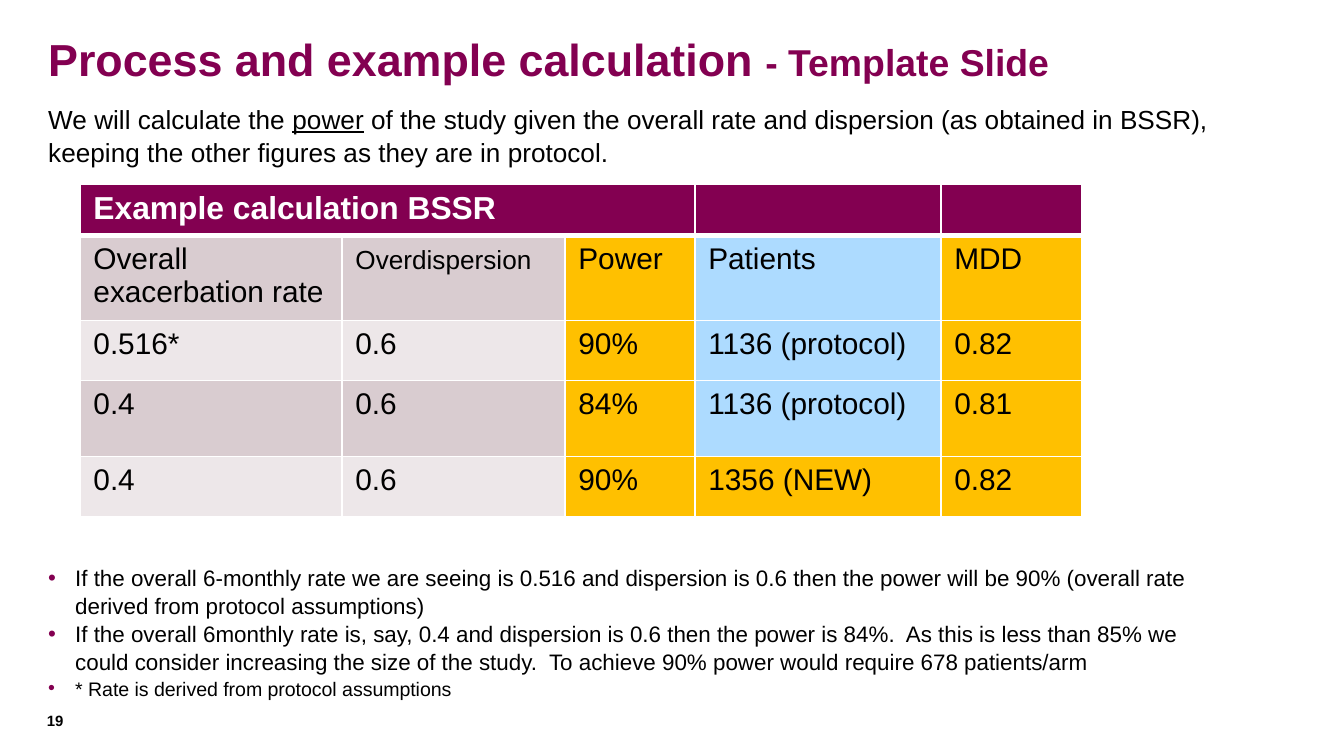
from dataclasses import dataclass

from lxml.etree import SubElement
from pptx import Presentation
from pptx.dml.color import RGBColor as RGB
from pptx.enum.text import MSO_ANCHOR as Anchor
from pptx.oxml.ns import qn
from pptx.util import Pt

SCALE = 914400 / 134.4


def px(n):
    return round(n * SCALE)


@dataclass(frozen=True)
class Theme:
    font: str = "Arial"
    plum: str = "830051"
    black: str = "000000"
    white: str = "FFFFFF"
    band_dark: str = "D9CCD0"
    band_light: str = "EDE7E9"
    gold: str = "FFC000"
    blue: str = "ADDBFF"
    title: float = 24
    subtitle: float = 20
    intro: float = 14
    header: float = 17
    cell: float = 16
    small_cell: float = 14
    bullet: float = 12
    footnote: float = 10.5
    number: float = 8
    spacing: float = 1.05


class Deck:
    def __init__(self, theme):
        self.t = theme
        self.prs = Presentation()
        self.prs.slide_width, self.prs.slide_height = px(1344), px(756)
        self.s = self.prs.slides.add_slide(self.prs.slide_layouts[6])

    def style(self, r, size, color, bold=False, underline=False):
        f = r.font
        f.name, f.size, f.bold = self.t.font, Pt(size), bold
        f.color.rgb = RGB.from_string(color)
        if underline:
            f.underline = True

    def box(self, x, y, w, h, anchor=Anchor.TOP):
        tf = self.s.shapes.add_textbox(px(x), px(y), px(w), px(h)).text_frame
        tf.word_wrap = True
        tf.vertical_anchor = anchor
        return tf

    def title(self, main, suffix, *frame):
        p = self.box(*frame, Anchor.MIDDLE).paragraphs[0]
        for text, size in ((main, self.t.title), (suffix, self.t.subtitle)):
            r = p.add_run()
            r.text = text
            self.style(r, size, self.t.plum, True)

    def intro(self, before, term, after, *frame):
        p = self.box(*frame).paragraphs[0]
        p.line_spacing = self.t.spacing
        for text in (before, term, after):
            r = p.add_run()
            r.text = text
            self.style(r, self.t.intro, self.t.black, underline=text == term)

    def bullets(self, items, *frame):
        tf = self.box(*frame)
        tf.text = "\n".join(text for text, _ in items)
        for p, (_, size) in zip(tf.paragraphs, items):
            p.line_spacing = self.t.spacing
            pPr = p._p.get_or_add_pPr()
            pPr.set("marL", str(px(27)))
            pPr.set("indent", str(-px(27)))
            color = SubElement(pPr, qn("a:buClr"))
            SubElement(color, qn("a:srgbClr"), val=self.t.plum)
            SubElement(pPr, qn("a:buFont"), typeface=self.t.font)
            SubElement(pPr, qn("a:buChar"), char="•")
            self.style(p.runs[0], size, self.t.black)

    def page_number(self, text, *frame):
        tf = self.box(*frame)
        tf.margin_left = tf.margin_top = tf.margin_right = tf.margin_bottom = 0
        tf.text = text
        self.style(tf.paragraphs[0].runs[0], self.t.number, self.t.black, True)

    def borders(self, cell, bottom, top):
        tcPr = cell._tc.get_or_add_tcPr()
        widths = {"a:lnL": 1, "a:lnR": 1, "a:lnT": top, "a:lnB": bottom}
        for tag, width in widths.items():
            ln = SubElement(tcPr, qn(tag), w=str(Pt(width)))
            fill = SubElement(ln, qn("a:solidFill"))
            SubElement(fill, qn("a:srgbClr"), val=self.t.white)

    def cell_fill(self, i, j, text):
        if i == 0:
            return self.t.plum
        if j < 2:
            return self.t.band_dark if i % 2 else self.t.band_light
        return self.t.blue if j == 3 and "NEW" not in text else self.t.gold

    def table(self, rows, x, y, widths, heights):
        frame = self.s.shapes.add_table(len(rows), len(widths), px(x), px(y),
                                        px(sum(widths)), px(sum(heights)))
        table = frame.table
        for col, w in zip(table.columns, widths):
            col.width = px(w)
        for row, h in zip(table.rows, heights):
            row.height = px(h)
        for i, row in enumerate(rows):
            size = self.t.cell if i else self.t.header
            color = self.t.black if i else self.t.white
            for j, text in enumerate(row):
                cell = table.cell(i, j)
                self.borders(cell, 1 if i else 3, 3 if i == 1 else 1)
                cell.fill.solid()
                cell.fill.fore_color.rgb = RGB.from_string(self.cell_fill(i, j, text))
                p = cell.text_frame.paragraphs[0]
                p.text = text
                for r in p.runs:
                    self.style(r, size, color, i == 0)
                p._p.get_or_add_endParaRPr().set("sz", str(size * 100))
        table.cell(0, 0).merge(table.cell(0, 2))
        return table

    def shrink(self, cell, size):
        p = cell.text_frame.paragraphs[0]
        p.runs[0].font.size = Pt(size)
        r = p.add_run()
        r.text = " "
        self.style(r, self.t.cell, self.t.black)


def main():
    t = Theme()
    deck = Deck(t)
    deck.title("Process and example calculation ", "- Template Slide", 35, 22, 1289, 74)
    deck.page_number("19", 47, 712, 58, 24)
    deck.bullets([
        ("If the overall 6-monthly rate we are seeing is 0.516 and dispersion is 0.6 "
         "then the power will be 90% (overall rate derived from protocol assumptions)",
         t.bullet),
        ("If the overall 6monthly rate is, say, 0.4 and dispersion is 0.6 then the power "
         "is 84%.  As this is less than 85% we could consider increasing the size of the "
         "study.  To achieve 90% power would require 678 patients/arm", t.bullet),
        ("* Rate is derived from protocol assumptions", t.footnote),
    ], 35, 556, 1196, 156)
    deck.intro("We will calculate the ", "power",
               " of the study given the overall rate and dispersion (as obtained in BSSR), "
               "keeping the other figures as they are in protocol.", 35, 95, 1196, 89)
    table = deck.table([
        ("Example calculation BSSR", "", "", "", ""),
        ("Overall exacerbation rate", "Overdispersion", "Power", "Patients", "MDD"),
        ("0.516*", "0.6", "90%", "1136 (protocol)", "0.82"),
        ("0.4", "0.6", "84%", "1136 (protocol)", "0.81"),
        ("0.4", "0.6", "90%", "1356 (NEW)", "0.82"),
    ], 80, 184, (262, 223, 130, 246, 141), (49, 80, 60, 76, 60))
    deck.shrink(table.cell(1, 1), t.small_cell)
    deck.prs.save("out.pptx")


if __name__ == "__main__":
    main()
